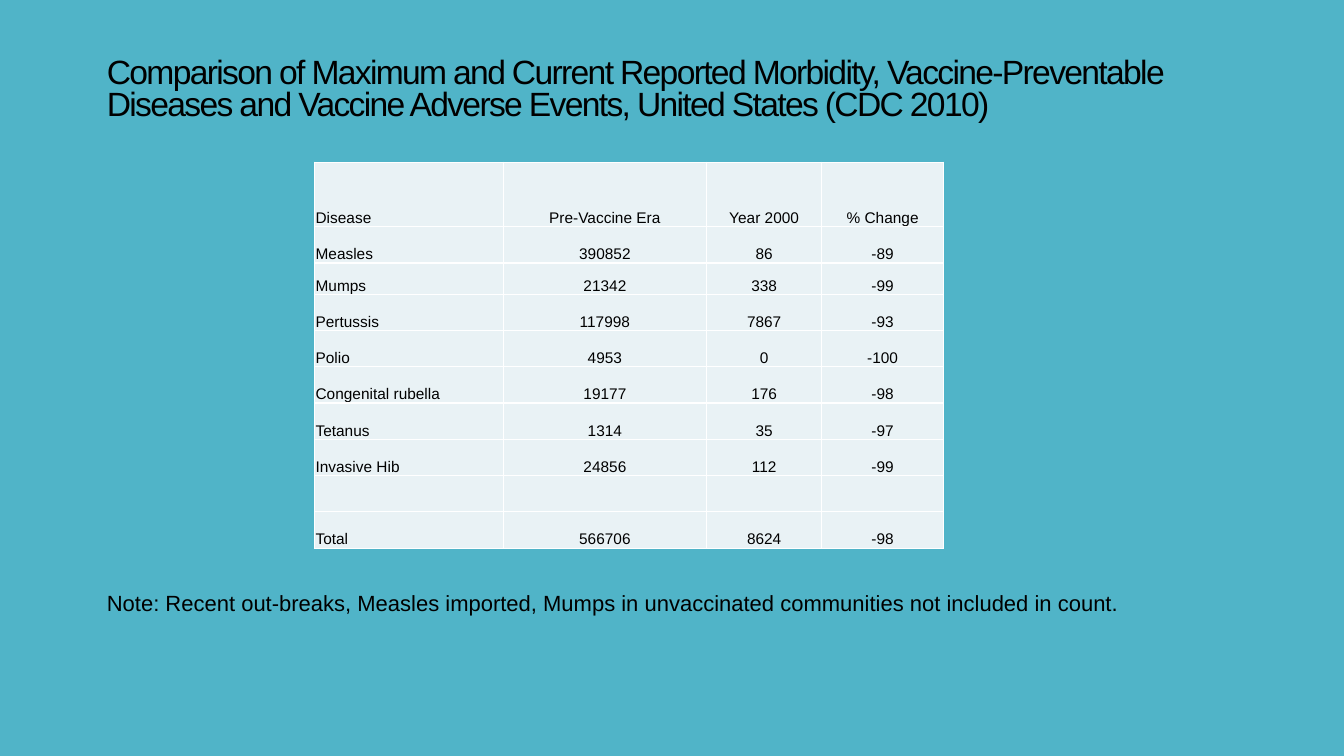
from lxml import etree
from pptx import Presentation
from pptx import util as u
from pptx.dml.color import RGBColor
from pptx.enum import text
from pptx.oxml import ns

TITLE = ("Comparison of Maximum and Current Reported Morbidity, Vaccine-Preventable "
         "Diseases and Vaccine Adverse Events, United States (CDC 2010)")
NOTE = ("Note: Recent out-breaks, Measles imported, Mumps in unvaccinated "
        "communities not included in count.")
MORBIDITY = [
    ("Disease", "Pre-Vaccine Era", "Year 2000", "% Change"),
    ("Measles", "390852", "86", "-89"),
    ("Mumps", "21342", "338", "-99"),
    ("Pertussis", "117998", "7867", "-93"),
    ("Polio", "4953", "0", "-100"),
    ("Congenital rubella", "19177", "176", "-98"),
    ("Tetanus", "1314", "35", "-97"),
    ("Invasive Hib", "24856", "112", "-99"),
    ("", "", "", ""),
    ("Total", "566706", "8624", "-98"),
]
COLUMN_WIDTHS = [1.87, 2.02, 1.14, 1.21]
ROW_HEIGHTS = [0.64, 0.36, 0.31] + [0.36] * 7


def color(value):
    return RGBColor.from_string(value)


def write(paragraph, words, size, align=text.PP_ALIGN.LEFT, line_spacing=1.0,
          tracking=0, font="Arial", fill="000000"):
    """Put formatted words in a paragraph; tracking is in points."""
    paragraph.alignment = align
    paragraph.line_spacing = line_spacing
    paragraph.space_before = u.Pt(0)
    run = paragraph.add_run()
    run.text = words
    run.font.name = font
    run.font.size = u.Pt(size)
    run.font.color.rgb = color(fill)
    if tracking:
        run.font._element.set("spc", str(round(tracking * 100)))


class MorbiditySlide:
    background = "50B4C8"
    cell_fill = "E9F2F5"
    border = "FFFFFF"

    def __init__(self, presentation):
        self.slide = presentation.slides.add_slide(presentation.slide_layouts[0])
        fill = self.slide.background.fill
        fill.solid()
        fill.fore_color.rgb = color(self.background)

    def placeholder(self, index, words, box, right=0.1, bottom=0.05, **style):
        shape = self.slide.placeholders[index]
        shape.left, shape.top, shape.width, shape.height = map(u.Inches, box)
        frame = shape.text_frame
        frame.word_wrap = True
        frame.auto_size = text.MSO_AUTO_SIZE.NONE
        frame.vertical_anchor = text.MSO_ANCHOR.BOTTOM
        frame.margin_right = u.Inches(right)
        frame.margin_bottom = u.Inches(bottom)
        write(frame.paragraphs[0], words, **style)

    def table(self, rows, left, top, widths, heights):
        frame = self.slide.shapes.add_table(
            len(rows), len(widths), u.Inches(left), u.Inches(top),
            u.Inches(sum(widths)), u.Inches(sum(heights)))
        table = frame.table
        table.first_row = table.horz_banding = False
        for column, width in zip(table.columns, widths):
            column.width = u.Inches(width)
        for row, height, values in zip(table.rows, heights, rows):
            row.height = u.Inches(height)
            for index, (cell, value) in enumerate(zip(row.cells, values)):
                self.cell(cell, value, centered=index > 0)

    def cell(self, cell, value, centered):
        cell.margin_left = cell.margin_right = cell.margin_top = u.Inches(0.01)
        cell.margin_bottom = 0
        cell.vertical_anchor = text.MSO_ANCHOR.BOTTOM
        if value:
            align = text.PP_ALIGN.CENTER if centered else text.PP_ALIGN.LEFT
            write(cell.text_frame.paragraphs[0], value, size=11, align=align)
        properties = cell._tc.get_or_add_tcPr()
        for side in ("lnL", "lnR", "lnT", "lnB"):
            line = etree.SubElement(properties, ns.qn(f"a:{side}"), w=str(u.Pt(1)))
            solid = etree.SubElement(line, ns.qn("a:solidFill"))
            etree.SubElement(solid, ns.qn("a:srgbClr"), val=self.border)
        cell.fill.solid()
        cell.fill.fore_color.rgb = color(self.cell_fill)


def main():
    presentation = Presentation()
    presentation.slide_width = u.Inches(13.33)
    presentation.slide_height = u.Inches(7.5)
    page = MorbiditySlide(presentation)
    page.placeholder(0, TITLE, (0.96, 0.51, 11.79, 0.76), right=0.3,
                     size=24, line_spacing=0.8, tracking=-1.2)
    page.placeholder(1, NOTE, (0.96, 1.5, 10.49, 4.79), bottom=0.18,
                     size=15.7, line_spacing=0.75)
    page.table(MORBIDITY, 3.12, 1.61, COLUMN_WIDTHS, ROW_HEIGHTS)
    presentation.save("out.pptx")


if __name__ == "__main__":
    main()
